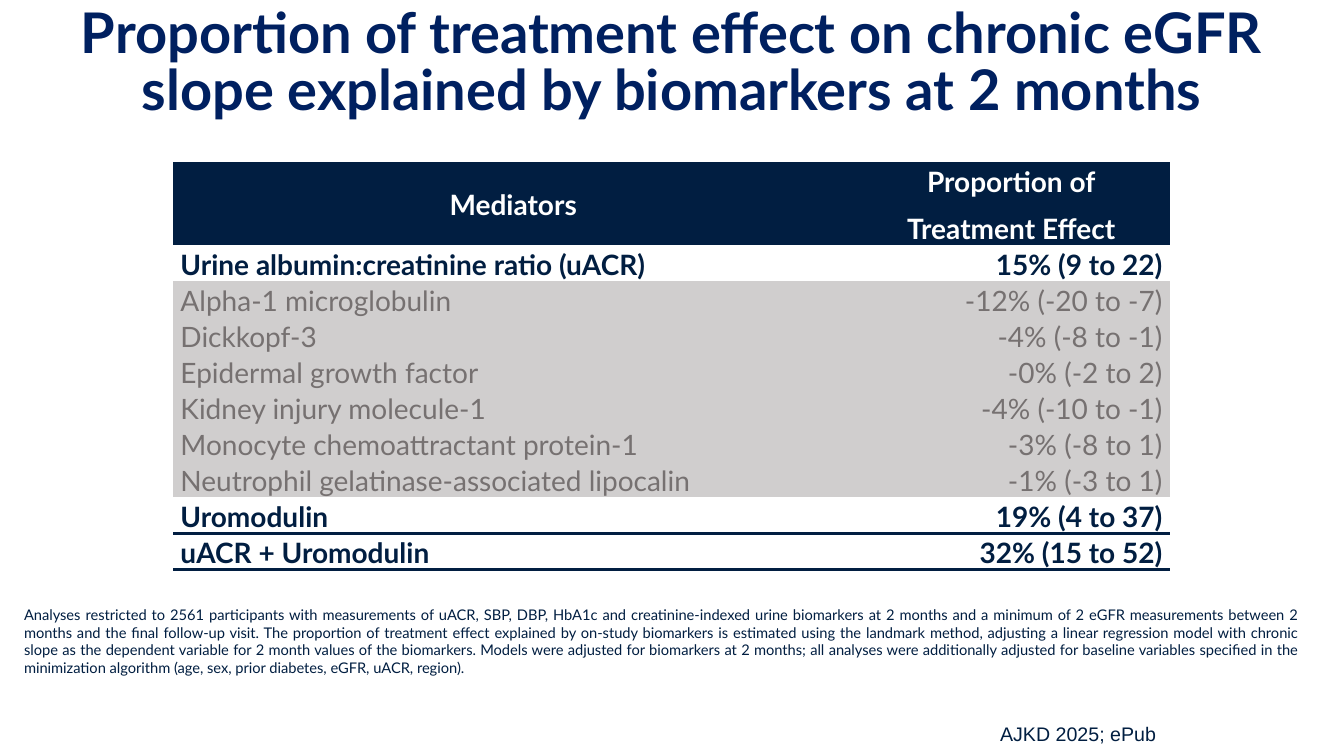
import pptx
import pptx.dml.color
import pptx.enum.text
import pptx.oxml
import pptx.oxml.ns
import pptx.util

EMU_PER_PX = 9144
NAVY = "011E41"
WHITE = "FFFFFF"
GREY_FILL = "D0CECE"
GREY_TEXT = "767171"
NO_GRID_STYLE = "{2D5ABB26-0587-4C30-8999-92F81FD0307C}"
ALIGN = pptx.enum.text.PP_ALIGN
ANCHOR = pptx.enum.text.MSO_ANCHOR

TITLE = "Proportion of treatment effect on chronic eGFR slope explained by biomarkers at 2 months"
FOOTNOTE = (
    "Analyses restricted to 2561 participants with measurements of uACR, SBP, DBP, HbA1c and "
    "creatinine-indexed urine biomarkers at 2 months and a minimum of 2 eGFR measurements between "
    "2 months and the final follow-up visit. The proportion of treatment effect explained by "
    "on-study biomarkers is estimated using the landmark method, adjusting a linear regression "
    "model with chronic slope as the dependent variable for 2 month values of the biomarkers. "
    "Models were adjusted for biomarkers at 2 months; all analyses were additionally adjusted for "
    "baseline variables specified in the minimization algorithm (age, sex, prior diabetes, eGFR, "
    "uACR, region)."
)
HEADERS = ("Mediators", "Proportion of\nTreatment Effect")
MEDIATORS = [
    ("Urine albumin:creatinine ratio (uACR)", "15% (9 to 22)"),
    ("Alpha-1 microglobulin", "-12% (-20 to -7)"),
    ("Dickkopf-3", "-4% (-8 to -1)"),
    ("Epidermal growth factor", "-0% (-2 to 2)"),
    ("Kidney injury molecule-1", "-4% (-10 to -1)"),
    ("Monocyte chemoattractant protein-1", "-3% (-8 to 1)"),
    ("Neutrophil gelatinase-associated lipocalin", "-1% (-3 to 1)"),
    ("Uromodulin", "19% (4 to 37)"),
    ("uACR + Uromodulin", "32% (15 to 52)"),
]
HIGHLIGHTED = {"Urine albumin:creatinine ratio (uACR)", "Uromodulin", "uACR + Uromodulin"}
RULES = {"Uromodulin": ("lnB",), "uACR + Uromodulin": ("lnT", "lnB")}


def px(length):
    return pptx.util.Emu(length * EMU_PER_PX)


def color(value):
    return pptx.dml.color.RGBColor.from_string(value)


def format_text(text_frame, size, text_color, align, font="Lato", bold=False,
                line_spacing=None, space_after=None):
    for paragraph in text_frame.paragraphs:
        paragraph.alignment = align
        paragraph.line_spacing = line_spacing
        paragraph.space_after = space_after
        for run in paragraph.runs:
            run.font.name = font
            run.font.size = pptx.util.Pt(size)
            run.font.bold = bold
            run.font.color.rgb = color(text_color)


def add_text(slide, box, text, size, text_color, align, **formatting):
    text_frame = slide.shapes.add_textbox(*map(px, box)).text_frame
    text_frame.word_wrap = True
    text_frame.text = text
    format_text(text_frame, size, text_color, align, **formatting)
    return text_frame


def add_title(slide):
    text_frame = add_text(slide, (24, 44, 1284, 77), TITLE, 40, "002060", ALIGN.CENTER,
                          bold=True, line_spacing=0.85)
    text_frame.vertical_anchor = ANCHOR.BOTTOM
    text_frame.margin_left = text_frame.margin_right = 0
    text_frame.margin_top = text_frame.margin_bottom = 0


def add_rules(cell, edges):
    properties = cell._tc.get_or_add_tcPr()
    for position, edge in enumerate(edges):
        line = pptx.oxml.parse_xml(
            f'<a:{edge} {pptx.oxml.ns.nsdecls("a")} w="{pptx.util.Pt(3)}">'
            f'<a:solidFill><a:srgbClr val="{NAVY}"/></a:solidFill></a:{edge}>'
        )
        properties.insert(position, line)


def fill_cell(cell, text, fill, text_color, align, bold):
    cell.text_frame.text = text
    cell.vertical_anchor = ANCHOR.MIDDLE
    cell.margin_left = cell.margin_right = px(7)
    cell.margin_top = cell.margin_bottom = 0
    cell.fill.solid()
    cell.fill.fore_color.rgb = color(fill)
    format_text(cell.text_frame, 20, text_color, align, bold=bold,
                line_spacing=1.07, space_after=pptx.util.Pt(8))


def add_mediator_table(slide):
    frame = slide.shapes.add_table(len(MEDIATORS) + 1, len(HEADERS),
                                   px(172), px(161), px(988), px(388))
    table = frame.table
    table._tbl.tblPr.find(pptx.oxml.ns.qn("a:tableStyleId")).text = NO_GRID_STYLE
    for column, width in zip(table.columns, (674, 314)):
        column.width = px(width)
    for index, row in enumerate(table.rows):
        row.height = px(32 if index else 55)
    for column, header in enumerate(HEADERS):
        fill_cell(table.cell(0, column), header, NAVY, WHITE, ALIGN.CENTER, True)
    for row, values in enumerate(MEDIATORS, start=1):
        name = values[0]
        bold = name in HIGHLIGHTED
        fill, text_color = (WHITE, NAVY) if bold else (GREY_FILL, GREY_TEXT)
        for column, align in enumerate((ALIGN.LEFT, ALIGN.RIGHT)):
            cell = table.cell(row, column)
            fill_cell(cell, values[column], fill, text_color, align, bold)
            add_rules(cell, RULES.get(name, ()))


def main():
    presentation = pptx.Presentation()
    presentation.slide_width = px(1333)
    presentation.slide_height = px(750)
    slide = presentation.slides.add_slide(presentation.slide_layouts[6])
    add_title(slide)
    add_text(slide, (14, 596, 1285, 98), FOOTNOTE, 10.5, NAVY, ALIGN.JUSTIFY)
    add_mediator_table(slide)
    add_text(slide, (982, 711, 249, 34), "AJKD 2025; ePub", 14, NAVY, ALIGN.LEFT, font="Arial")
    presentation.save("out.pptx")


if __name__ == "__main__":
    main()
